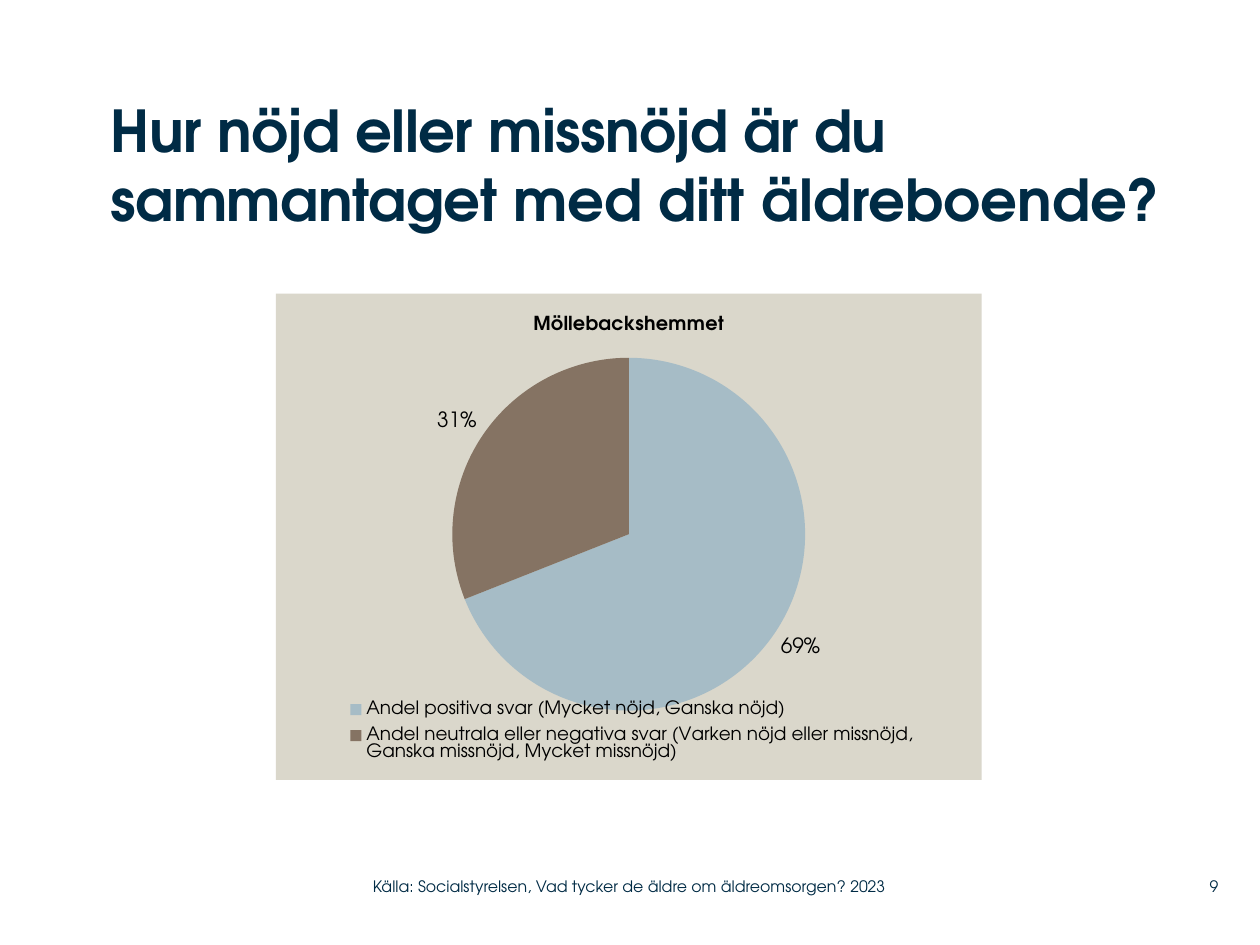
from lxml import etree
from pptx import Presentation
from pptx.chart.data import CategoryChartData
from pptx.dml.color import RGBColor
from pptx.enum.chart import XL_CHART_TYPE, XL_LABEL_POSITION, XL_LEGEND_POSITION
from pptx.enum.text import MSO_ANCHOR, MSO_AUTO_SIZE, PP_ALIGN
from pptx.oxml import parse_xml
from pptx.oxml.ns import nsdecls, qn
from pptx.util import Inches, Pt

THEME = {
    "font": "TeX Gyre Adventor",
    "ink": "002B45", "chart_text": "000000", "panel": "DAD7CB",
    "slices": ["A6BCC6", "857363"],
    "title": 33, "small": 9, "chart": 18, "chart_title": 11, "legend": 10.5, "label": 12,
}

TITLE_RUNS = [("Hur nöjd eller missnöjd är du sammantaget ", -0.3), ("med ditt äldreboende?", 0)]
TITLE_BOX = (0.88, 0.75, 8.83, 1.42)
SMALL_TEXTS = [
    ("9", (9.2, 6.89, 0.47, 0.29), PP_ALIGN.RIGHT),
    ("Källa: Socialstyrelsen, Vad tycker de äldre om äldreomsorgen? 2023",
     (2.96, 6.89, 4.43, 0.29), PP_ALIGN.LEFT),
]
HOME = "Möllebackshemmet"
ANSWERS = [
    ("Andel positiva svar (Mycket nöjd, Ganska nöjd)", 69),
    ("Andel neutrala eller negativa svar (Varken nöjd eller missnöjd, "
     "Ganska missnöjd, Mycket missnöjd)", 31),
]
CHART_BOX = (2.19, 2.33, 5.6, 3.86)
# Shares of the chart area: left, top, width, height
PIE_AREA = (0.25, 0.13, 0.5, 0.73)
LEGEND_AREA = (0.09, 0.82, 0.83, 0.16)


def style(font, size, color, bold=False):
    font.name, font.size, font.bold = THEME["font"], Pt(size), bold
    font.color.rgb = RGBColor.from_string(color)


def prepare(tf, anchor):
    tf.word_wrap = True
    tf.auto_size = MSO_AUTO_SIZE.NONE
    tf.vertical_anchor = anchor
    tf.margin_left = tf.margin_top = tf.margin_right = tf.margin_bottom = 0
    return tf.paragraphs[0]


def add_title(s):
    sp = s.shapes.title
    sp.left, sp.top, sp.width, sp.height = map(Inches, TITLE_BOX)
    p = prepare(sp.text_frame, MSO_ANCHOR.TOP)
    p.alignment = PP_ALIGN.LEFT
    for text, spacing in TITLE_RUNS:
        r = p.add_run()
        r.text = text
        style(r.font, THEME["title"], THEME["ink"], True)
        r._r.get_or_add_rPr().set("spc", str(round(spacing * 100)))


def add_small_text(s, text, box, align):
    sp = s.shapes.add_textbox(*map(Inches, box))
    p = prepare(sp.text_frame, MSO_ANCHOR.MIDDLE)
    p.alignment = align
    r = p.add_run()
    r.text = text
    style(r.font, THEME["small"], THEME["ink"])


def place(parent, area, inner=False):
    """Give a plot area or legend a manual layout."""
    for old in parent.findall(qn("c:layout")):
        parent.remove(old)
    layout = parse_xml(f"<c:layout {nsdecls('c')}><c:manualLayout/></c:layout>")
    values = [("layoutTarget", "inner")] if inner else []
    values += [("xMode", "edge"), ("yMode", "edge"), *zip("xywh", area)]
    for tag, value in values:
        etree.SubElement(layout[0], qn(f"c:{tag}")).set("val", str(value))
    if inner:
        parent.insert(0, layout)
    else:
        parent.find(qn("c:legendPos")).addnext(layout)


def fill_panel(chart):
    chart_space = chart._chartSpace
    chart_space.find(qn("c:chart")).addnext(parse_xml(
        f'<c:spPr {nsdecls("c", "a")}><a:solidFill><a:srgbClr val="{THEME["panel"]}"/>'
        "</a:solidFill><a:ln><a:noFill/></a:ln></c:spPr>"))


def add_pie(s):
    data = CategoryChartData()
    data.categories = [name for name, _ in ANSWERS]
    data.add_series(HOME, [value for _, value in ANSWERS])
    chart = s.shapes.add_chart(XL_CHART_TYPE.PIE, *map(Inches, CHART_BOX), data).chart
    style(chart.font, THEME["chart"], THEME["chart_text"])
    fill_panel(chart)

    chart.has_title = True
    r = chart.chart_title.text_frame.paragraphs[0].add_run()
    r.text = HOME
    style(r.font, THEME["chart_title"], THEME["chart_text"], True)

    chart.has_legend = True
    legend = chart.legend
    legend.position = XL_LEGEND_POSITION.BOTTOM
    legend.include_in_layout = False
    style(legend.font, THEME["legend"], THEME["chart_text"])
    place(legend._element, LEGEND_AREA)

    plot = chart.plots[0]
    plot.vary_by_categories = True
    place(chart._chartSpace.chart.plotArea, PIE_AREA, inner=True)
    for i, color in enumerate(THEME["slices"]):
        point = plot.series[0].points[i].format
        point.fill.solid()
        point.fill.fore_color.rgb = RGBColor.from_string(color)
        point.line.fill.background()

    labels = plot.series[0].data_labels
    labels.show_percentage = True
    labels.show_value = False
    labels.number_format, labels.number_format_is_linked = "0%", False
    labels.position = XL_LABEL_POSITION.OUTSIDE_END
    style(labels.font, THEME["label"], THEME["chart_text"])


def main():
    prs = Presentation()
    prs.slide_width, prs.slide_height = Inches(10), Inches(7.5)
    s = prs.slides.add_slide(prs.slide_layouts[5])
    for item in SMALL_TEXTS:
        add_small_text(s, *item)
    add_title(s)
    add_pie(s)
    prs.save("out.pptx")


if __name__ == "__main__":
    main()
